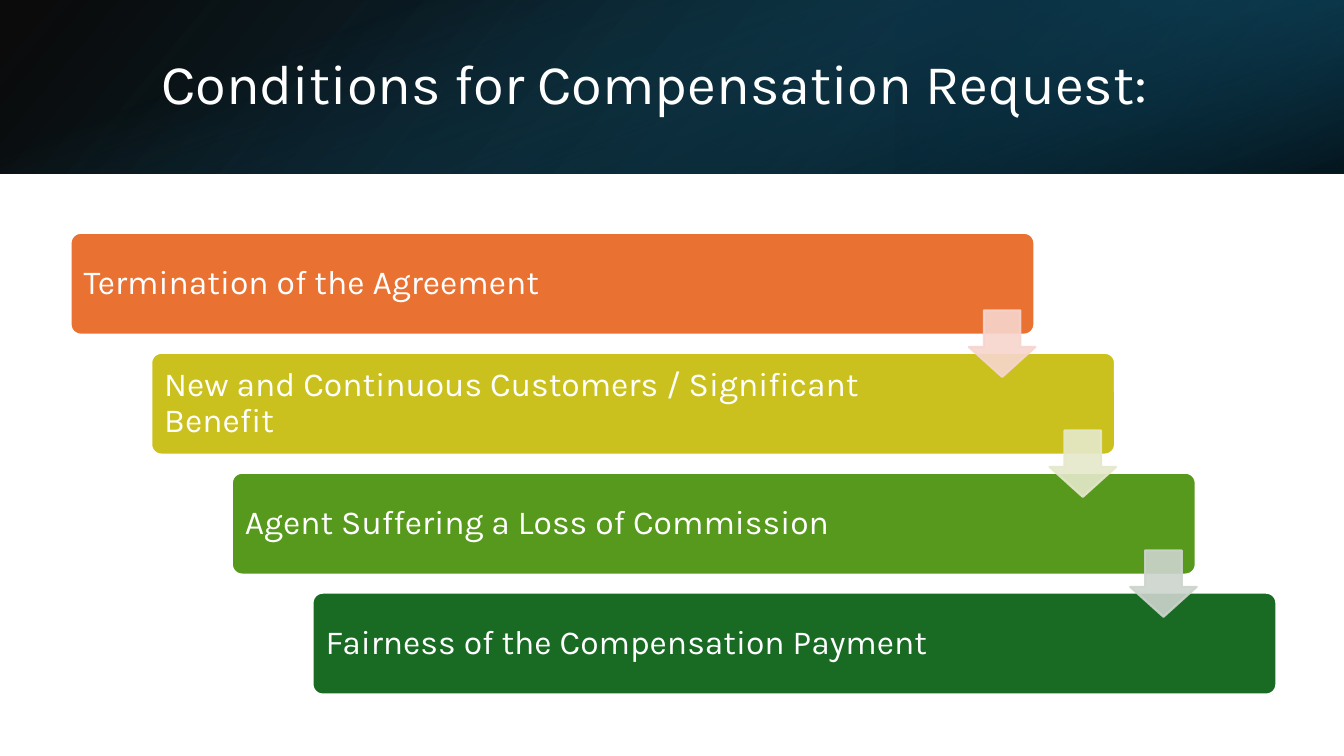
from dataclasses import dataclass

from lxml import etree
from pptx import Presentation
from pptx.dml.color import RGBColor
from pptx.enum.shapes import MSO_SHAPE
from pptx.enum.text import MSO_ANCHOR
from pptx.oxml.ns import qn
from pptx.shapes.autoshape import Shape
from pptx.slide import Slide
from pptx.util import Inches, Pt

RECTANGLE = MSO_SHAPE.RECTANGLE
ROUNDED_RECTANGLE = MSO_SHAPE.ROUNDED_RECTANGLE
DOWN_ARROW = MSO_SHAPE.DOWN_ARROW
MIDDLE = MSO_ANCHOR.MIDDLE

FONT = "Karla"
WHITE = "FFFFFF"
SLIDE_WIDTH, SLIDE_HEIGHT = 13.33, 7.5
HEADER_HEIGHT = 1.72

# The staircase: each step moves one column right and one row down.
COLUMN, ROW = 0.8, 1.19
STEPS_LEFT, STEPS_TOP = 0.7, 2.31
BAR_WIDTH, BAR_HEIGHT = 9.56, 1.01
LABEL_WIDTH, LABEL_INSET = 8.05, 0.03
ARROW_LEFT, ARROW_TOP, ARROW_SIZE = 9.61, 3.08, 0.66
ARROW_OPACITY = 90


@dataclass(frozen=True)
class Box:
    left: float
    top: float
    width: float
    height: float


@dataclass(frozen=True)
class Stop:
    position: float
    color: str
    opacity: int


@dataclass(frozen=True)
class HeaderLayer:
    box: Box
    angle: int
    stops: tuple[Stop, Stop]
    rotation: int = 0
    mirrored: bool = False


@dataclass(frozen=True)
class Step:
    text: str
    color: str
    arrow_color: str | None = None


HEADER_LAYERS = (
    HeaderLayer(Box(0, 0, SLIDE_WIDTH, HEADER_HEIGHT), 140,
                (Stop(0, "000000", 96), Stop(1, "104862", 100)), mirrored=True),
    HeaderLayer(Box(SLIDE_WIDTH * 2 / 3, 0, SLIDE_WIDTH / 3, HEADER_HEIGHT), 320,
                (Stop(0.19, "0B3041", 68), Stop(1, "156082", 79)),
                rotation=180, mirrored=True),
    # A tall box turned on its side, so that it covers the whole header
    HeaderLayer(Box((SLIDE_WIDTH - HEADER_HEIGHT) / 2, (HEADER_HEIGHT - SLIDE_WIDTH) / 2,
                    HEADER_HEIGHT, SLIDE_WIDTH), 340,
                (Stop(0.23, "156082", 0), Stop(0.99, "000000", 74)), rotation=90),
)

STEPS = (
    Step("Termination of the Agreement", "E97132", "F7D5CE"),
    Step("New and Continuous Customers / Significant Benefit", "CBC11E", "E5E8CA"),
    Step("Agent Suffering a Loss of Commission", "56991D", "CCD4CD"),
    Step("Fairness of the Compensation Payment", "196B24"),
)


def rgb(color: str) -> RGBColor:
    return RGBColor.from_string(color)


def place(box: Box) -> tuple[int, int, int, int]:
    return Inches(box.left), Inches(box.top), Inches(box.width), Inches(box.height)


def set_opacity(shape: Shape, *percentages: int) -> None:
    """Give each colour of the shape, in order, its opacity."""
    for color, percentage in zip(list(shape.element.iter(qn("a:srgbClr"))), percentages):
        etree.SubElement(color, qn("a:alpha")).set("val", str(percentage * 1000))


def add_header_layer(slide: Slide, layer: HeaderLayer) -> None:
    shape = slide.shapes.add_shape(RECTANGLE, *place(layer.box))
    shape.shadow.inherit = False
    shape.line.fill.background()
    shape.rotation = layer.rotation
    if layer.mirrored:
        shape.element.spPr.find(qn("a:xfrm")).set("flipH", "1")
    shape.fill.gradient()
    shape.fill.gradient_angle = 360 - layer.angle
    for gradient_stop, stop in zip(shape.fill.gradient_stops, layer.stops):
        gradient_stop.position = stop.position
        gradient_stop.color.rgb = rgb(stop.color)
    set_opacity(shape, *(stop.opacity for stop in layer.stops))


def add_solid(slide: Slide, kind: MSO_SHAPE, box: Box, *, fill: str, line: str,
              adjustments: tuple[float, ...]) -> Shape:
    shape = slide.shapes.add_shape(kind, *place(box))
    shape.shadow.inherit = False
    shape.fill.solid()
    shape.fill.fore_color.rgb = rgb(fill)
    shape.line.color.rgb = rgb(line)
    shape.line.width = Pt(1.5)
    for index, value in enumerate(adjustments):
        shape.adjustments[index] = value
    return shape


def add_text(slide: Slide, text: str, box: Box, *, size: float, color: str = WHITE,
             side_margin: float = 0.1, end_margin: float = 0.1) -> None:
    frame = slide.shapes.add_textbox(*place(box)).text_frame
    frame.word_wrap = True
    frame.vertical_anchor = MIDDLE
    frame.margin_left = frame.margin_right = Inches(side_margin)
    frame.margin_top = frame.margin_bottom = Inches(end_margin)
    paragraph = frame.paragraphs[0]
    paragraph.line_spacing = 0.9
    run = paragraph.add_run()
    run.text = text
    run.font.name = FONT
    run.font.size = Pt(size)
    run.font.color.rgb = rgb(color)


def add_bar(slide: Slide, index: int, step: Step) -> None:
    left, top = STEPS_LEFT + index * COLUMN, STEPS_TOP + index * ROW
    add_solid(slide, ROUNDED_RECTANGLE, Box(left, top, BAR_WIDTH, BAR_HEIGHT),
              fill=step.color, line=WHITE, adjustments=(0.1,))
    add_text(slide, step.text,
             Box(left + LABEL_INSET, top + LABEL_INSET,
                 LABEL_WIDTH, BAR_HEIGHT - 2 * LABEL_INSET), size=24)


def add_arrow(slide: Slide, index: int, color: str) -> None:
    box = Box(ARROW_LEFT + index * COLUMN, ARROW_TOP + index * ROW, ARROW_SIZE, ARROW_SIZE)
    arrow = add_solid(slide, DOWN_ARROW, box, fill=color, line=color,
                      adjustments=(0.55, 0.45))
    set_opacity(arrow, ARROW_OPACITY, ARROW_OPACITY)


def main() -> None:
    presentation = Presentation()
    presentation.slide_width = Inches(SLIDE_WIDTH)
    presentation.slide_height = Inches(SLIDE_HEIGHT)
    slide = presentation.slides.add_slide(presentation.slide_layouts[6])

    for layer in HEADER_LAYERS:
        add_header_layer(slide, layer)
    add_text(slide, "Conditions for Compensation Request:",
             Box(1.5, 0.38, 10.98, 0.96), size=40, end_margin=0.05)

    for index, step in enumerate(STEPS):
        add_bar(slide, index, step)
    for index, step in enumerate(STEPS):
        if step.arrow_color:
            add_arrow(slide, index, step.arrow_color)

    presentation.save("out.pptx")


if __name__ == "__main__":
    main()
